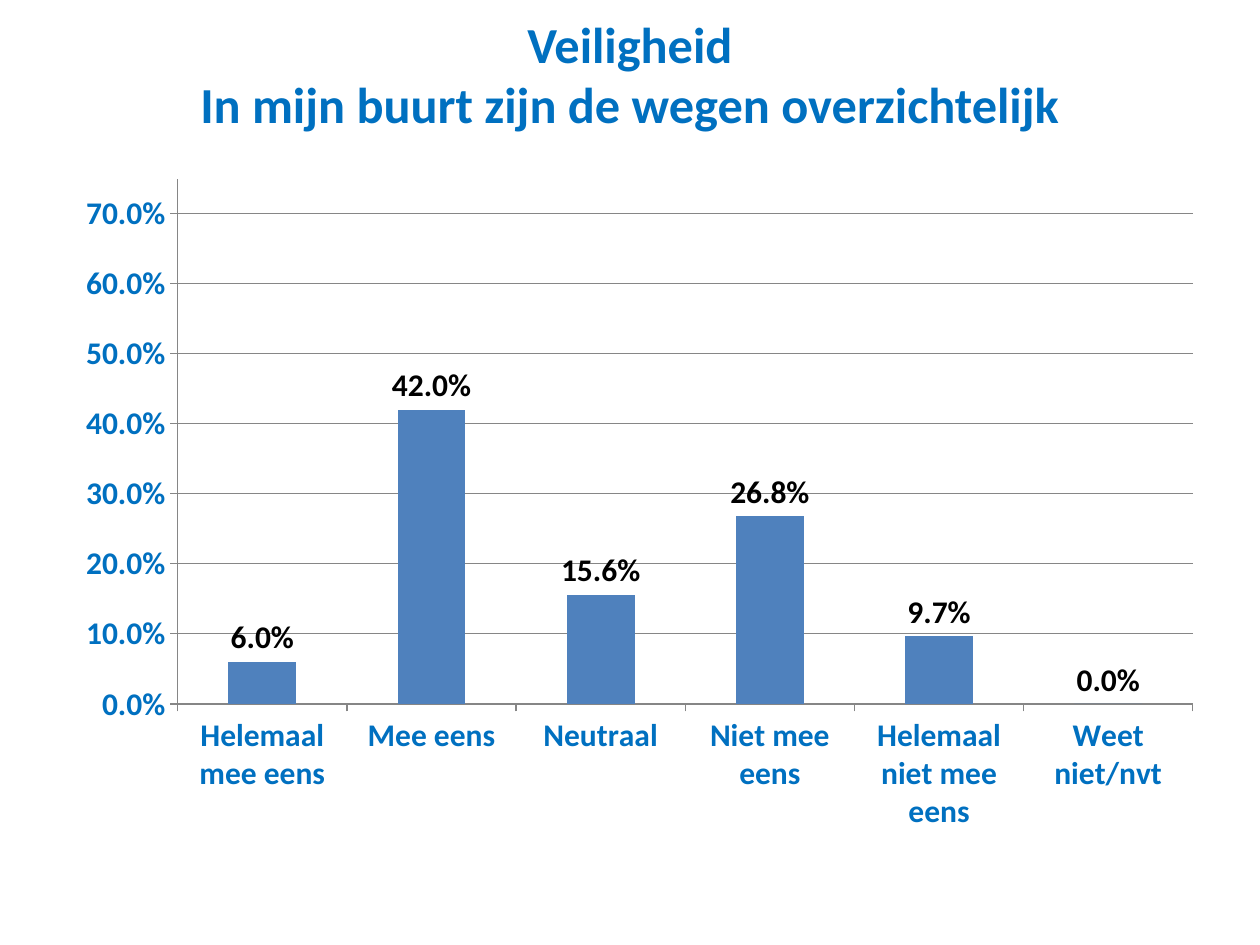
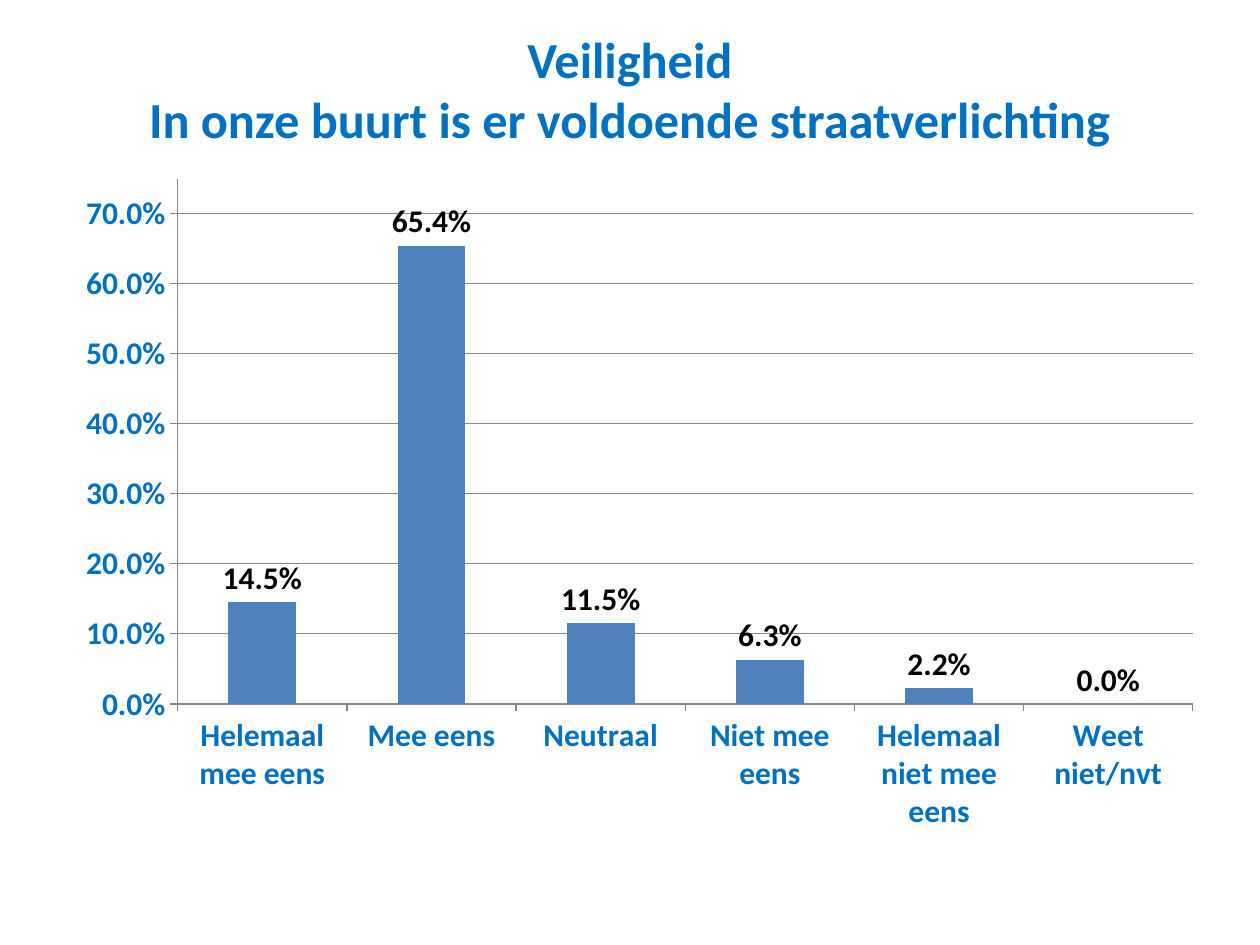
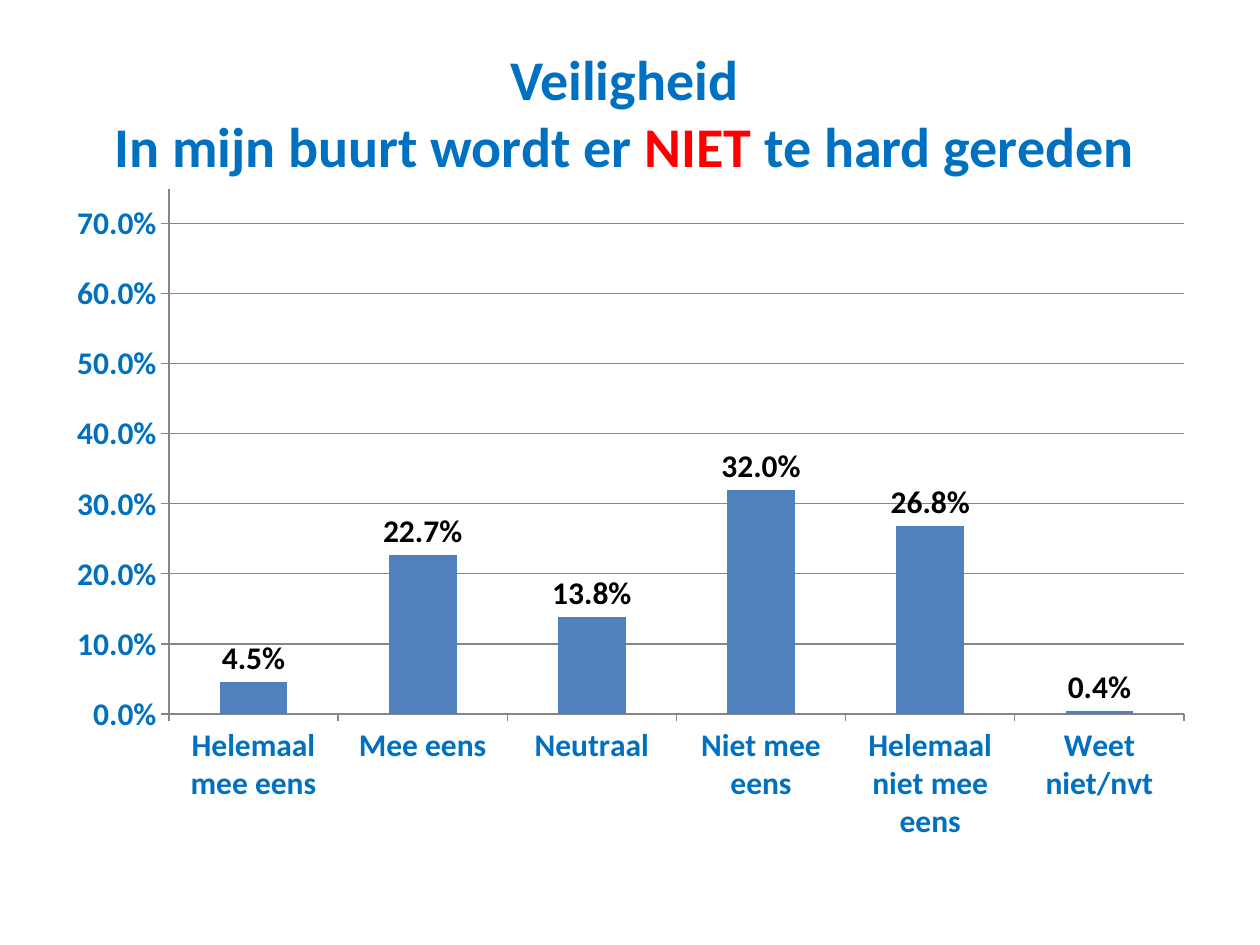
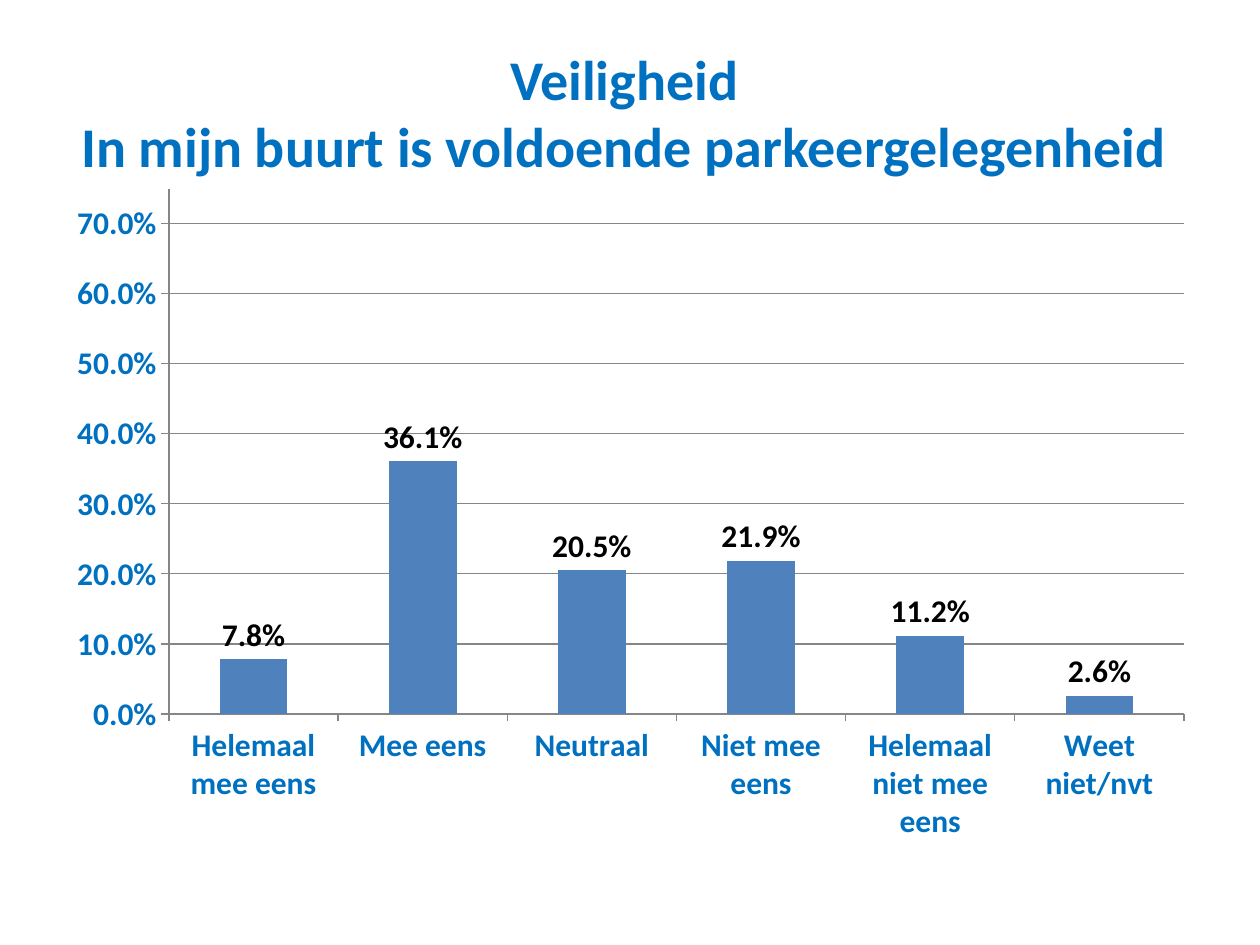
from pptx import Presentation
from pptx.chart.data import CategoryChartData
from pptx.dml.color import RGBColor
from pptx.enum.chart import XL_CHART_TYPE, XL_LABEL_POSITION, XL_TICK_MARK
from pptx.enum.text import MSO_ANCHOR, MSO_AUTO_SIZE, PP_ALIGN
from pptx.util import Inches, Pt

FONT = "Calibri"
COLORS = {"blue": "0070C0", "red": "FF0000", "black": "000000",
          "bar": "4F81BD", "grid": "868686"}
PERCENT = "0.0%"
TOPIC = "Veiligheid"
ANSWERS = ["Helemaal mee eens", "Mee eens", "Neutraal", "Niet mee eens",
           "Helemaal niet mee eens", "Weet niet/nvt"]

# Boxes are left, top, width, height in inches
CHART_HIGH = (0.5, 1.31, 9.15, 5.39)
CHART_LOW = (0.43, 1.39, 9.15, 5.39)
TITLE_LOW = (0.5, 0.44, 8.91, 1.34)

# Each question: runs of text and colour, title box, space below, size, chart box, shares
QUESTIONS = [
    ([("In mijn buurt zijn de wegen overzichtelijk", "blue")],
     (0.5, 0.52, 9, 0.69), 0.15, 28.8, CHART_HIGH,
     [0.06, 0.42, 0.156, 0.268, 0.097, 0]),
    ([("In onze buurt is er voldoende straatverlichting", "blue")],
     (0.5, 0.44, 9, 0.93), 0.19, 28.8, CHART_HIGH,
     [0.145, 0.654, 0.115, 0.063, 0.022, 0]),
    ([("In mijn buurt wordt er ", "blue"), ("NIET", "red"),
      (" te hard gereden", "blue")],
     TITLE_LOW, 0.36, 32, CHART_LOW,
     [0.045, 0.227, 0.138, 0.32, 0.268, 0.004]),
    ([("In mijn buurt is voldoende parkeergelegenheid", "blue")],
     TITLE_LOW, 0.36, 32, CHART_LOW,
     [0.078, 0.361, 0.205, 0.219, 0.112, 0.026]),
]


def rgb(name):
    return RGBColor.from_string(COLORS[name])


def style_font(font, size, color, bold=True):
    font.name = FONT
    font.size = Pt(size)
    font.bold = bold
    font.color.rgb = rgb(color)


def add_run(p, text, size, color):
    r = p.add_run()
    r.text = text
    style_font(r.font, size, color)


def set_title(slide, box, question, size, space_below):
    """Topic on the first line, question on the second."""
    sp = slide.shapes.title
    sp.left, sp.top, sp.width, sp.height = map(Inches, box)
    tf = sp.text_frame
    tf.word_wrap = True
    tf.auto_size = MSO_AUTO_SIZE.NONE
    tf.vertical_anchor = MSO_ANCHOR.BOTTOM
    tf.margin_top = 0
    tf.margin_bottom = Inches(space_below)
    p = tf.paragraphs[0]
    p.alignment = PP_ALIGN.CENTER
    add_run(p, TOPIC, size, "blue")
    p.add_line_break()
    for text, color in question:
        add_run(p, text, size, color)


def style_axis(axis):
    axis.major_tick_mark = XL_TICK_MARK.OUTSIDE
    axis.minor_tick_mark = XL_TICK_MARK.NONE
    axis.format.line.color.rgb = rgb("grid")
    axis.format.line.width = Pt(0.75)
    style_font(axis.tick_labels.font, 18, "blue")


def add_answer_chart(slide, box, shares):
    """Column chart with the share of each answer."""
    data = CategoryChartData(number_format=PERCENT)
    data.categories = ANSWERS
    data.add_series("Series 1", shares)
    chart = slide.shapes.add_chart(XL_CHART_TYPE.COLUMN_CLUSTERED,
                                   *map(Inches, box), data).chart
    chart.has_title = False
    chart.has_legend = False
    style_font(chart.font, 18, "black", bold=False)

    # Axes
    style_axis(chart.category_axis)
    axis = chart.value_axis
    style_axis(axis)
    axis.minimum_scale, axis.maximum_scale, axis.major_unit = 0, 0.75, 0.1
    axis.tick_labels.number_format = PERCENT
    axis.tick_labels.number_format_is_linked = False
    axis.has_major_gridlines = True
    axis.major_gridlines.format.line.color.rgb = rgb("grid")
    axis.major_gridlines.format.line.width = Pt(0.75)

    # Columns and their labels
    plot = chart.plots[0]
    plot.gap_width = 150
    plot.vary_by_categories = False
    series = plot.series[0]
    series.format.fill.solid()
    series.format.fill.fore_color.rgb = rgb("bar")
    labels = series.data_labels
    labels.show_value = True
    labels.position = XL_LABEL_POSITION.OUTSIDE_END
    labels.number_format = PERCENT
    labels.number_format_is_linked = False
    style_font(labels.font, 18, "black")


def main():
    prs = Presentation()
    prs.slide_width, prs.slide_height = Inches(10), Inches(7.5)
    for question, title_box, space_below, size, chart_box, shares in QUESTIONS:
        slide = prs.slides.add_slide(prs.slide_layouts[5])
        set_title(slide, title_box, question, size, space_below)
        add_answer_chart(slide, chart_box, shares)
    prs.save("out.pptx")


if __name__ == "__main__":
    main()
